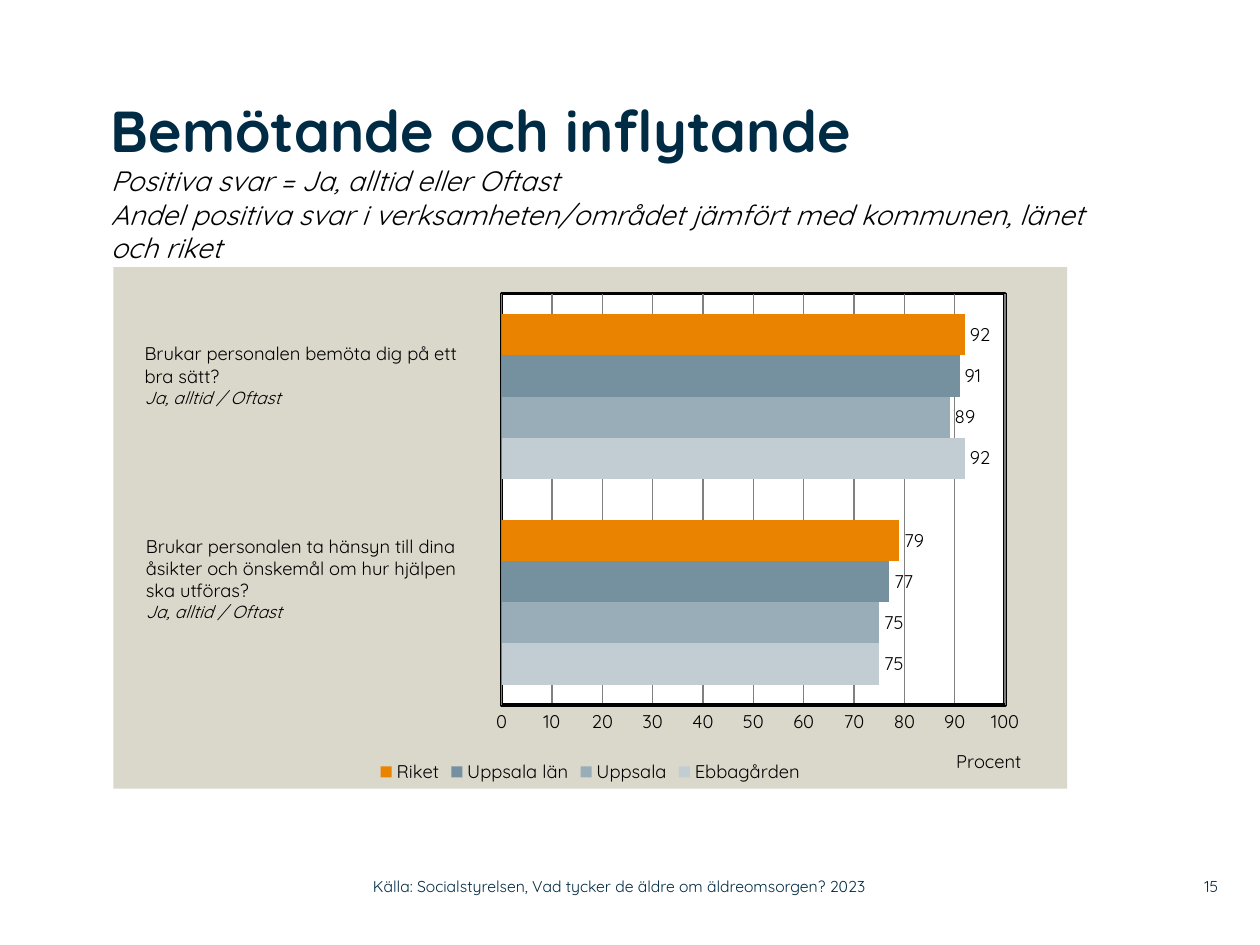
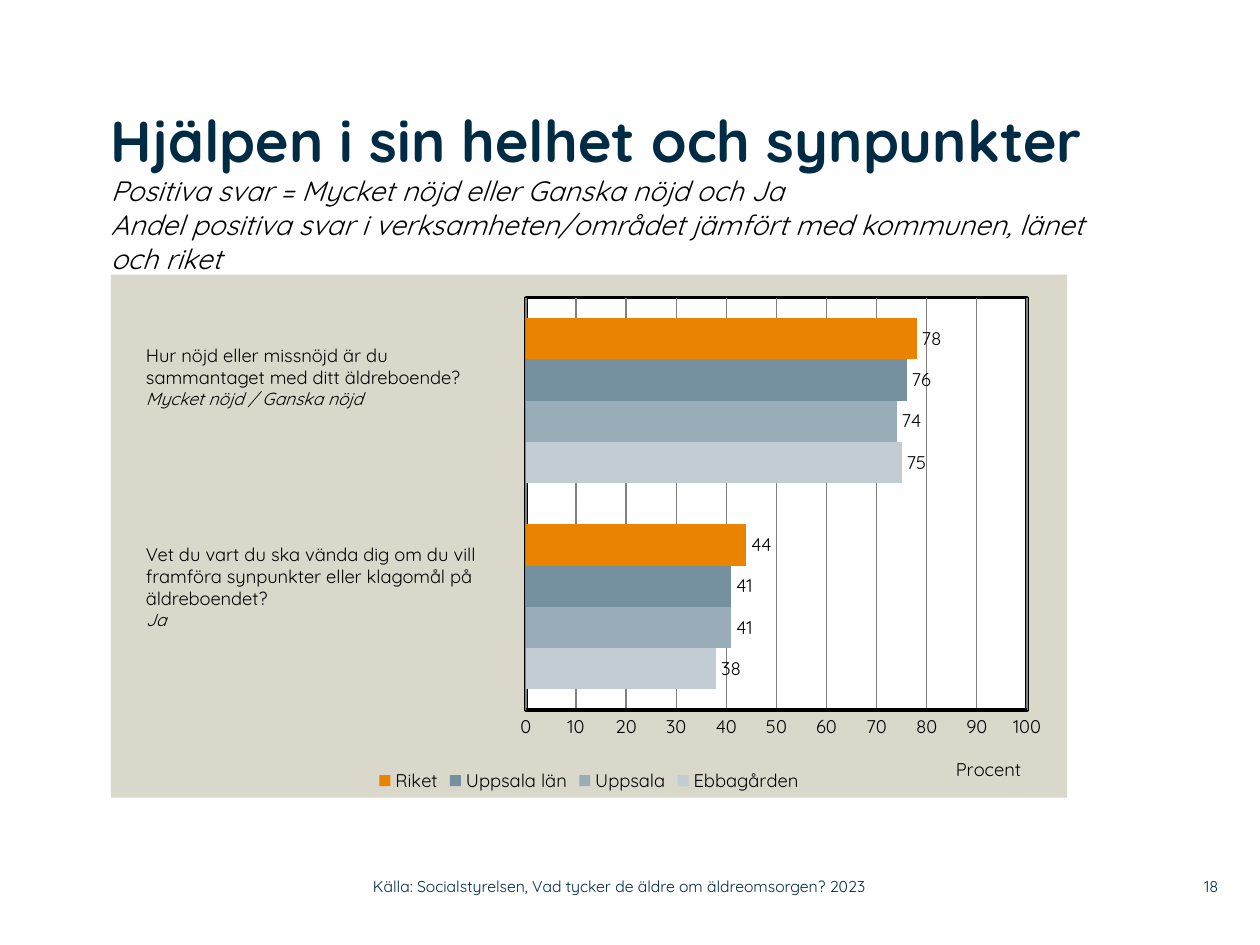
from dataclasses import dataclass

from lxml import etree
from pptx import Presentation
from pptx.chart.data import CategoryChartData
from pptx.dml.color import RGBColor
from pptx.enum.chart import (XL_CHART_TYPE, XL_LABEL_POSITION,
                             XL_LEGEND_POSITION, XL_TICK_MARK)
from pptx.enum.text import MSO_ANCHOR, MSO_AUTO_SIZE, PP_ALIGN
from pptx.oxml import parse_xml
from pptx.oxml.ns import nsdecls, qn
from pptx.util import Inches, Pt

BAR_CLUSTERED = XL_CHART_TYPE.BAR_CLUSTERED
OUTSIDE_END = XL_LABEL_POSITION.OUTSIDE_END
LEGEND_BOTTOM = XL_LEGEND_POSITION.BOTTOM
NO_TICK = XL_TICK_MARK.NONE
TOP, MIDDLE = MSO_ANCHOR.TOP, MSO_ANCHOR.MIDDLE
LEFT, RIGHT = PP_ALIGN.LEFT, PP_ALIGN.RIGHT
FIXED, GROW = MSO_AUTO_SIZE.NONE, MSO_AUTO_SIZE.SHAPE_TO_FIT_TEXT

FONT = "Quicksand"
TITLE_ONLY = 5
COLORS = {
    "navy": "002B45", "black": "000000", "white": "FFFFFF",
    "panel": "DAD7CB", "grid": "808080",
    "Ebbagården": "C2CDD3", "Uppsala": "99ADB9",
    "Uppsala län": "75909F", "Riket": "E98300",
}
FORMATS = {
    "title": {"size": 33, "bold": True, "color": "navy"},
    "subtitle": {"size": 16, "bold": False, "italic": True, "color": "black"},
    "question": {"size": 10.5, "color": "black"},
    "answer": {"size": 10, "italic": True, "color": "black"},
    "footer": {"size": 9, "color": "navy"},
    "chart": {"size": 10.5, "bold": False, "color": "black"},
}
SUBTITLE = ("Andel positiva svar i verksamheten/området jämfört med "
            "kommunen, länet och riket")
SOURCE = "Källa: Socialstyrelsen, Vad tycker de äldre om äldreomsorgen? 2023"


@dataclass
class Area:
    left: float
    top: float
    width: float
    height: float

    def lengths(self) -> list:
        return [Inches(value) for value in
                (self.left, self.top, self.width, self.height)]


@dataclass
class Question:
    area: Area
    lines: list[str]
    answer: str


@dataclass
class SurveyChart:
    area: Area
    plot: Area  # fractions of the chart
    values: dict[str, tuple[int, int]]  # bottom group first


@dataclass
class SurveyPage:
    number: int
    title: str
    positive: str
    title_area: Area
    chart: SurveyChart
    questions: list[Question]


PAGES = [
    SurveyPage(
        15, "Bemötande och inflytande",
        "Positiva svar = Ja, alltid eller Oftast",
        Area(0.88, 0.75, 8.04, 1.2),
        SurveyChart(
            Area(0.9, 2.12, 7.57, 4.14), Area(0.407, 0.051, 0.528, 0.789),
            {"Ebbagården": (75, 92), "Uppsala": (75, 89),
             "Uppsala län": (77, 91), "Riket": (79, 92)}),
        [Question(Area(1.05, 2.67, 2.97, 0.81),
                  ["Brukar personalen bemöta dig på ett", "bra sätt?"],
                  "Ja, alltid / Oftast"),
         Question(Area(1.06, 4.2, 3.01, 0.98),
                  ["Brukar personalen ta hänsyn till dina",
                   "åsikter och önskemål om hur hjälpen", "ska utföras?"],
                  "Ja, alltid / Oftast")]),
    SurveyPage(
        18, "Hjälpen i sin helhet och synpunkter",
        "Positiva svar = Mycket nöjd eller Ganska nöjd och Ja",
        Area(0.88, 0.83, 7.79, 1.34),
        SurveyChart(
            Area(0.88, 2.18, 7.59, 4.15), Area(0.434, 0.044, 0.524, 0.789),
            {"Ebbagården": (38, 75), "Uppsala": (41, 74),
             "Uppsala län": (41, 76), "Riket": (44, 78)}),
        [Question(Area(1.06, 2.68, 3.1, 0.81),
                  ["Hur nöjd eller missnöjd är du",
                   "sammantaget med ditt äldreboende?"],
                  "Mycket nöjd / Ganska nöjd"),
         Question(Area(1.06, 4.26, 3.05, 0.81),
                  ["Vet du vart du ska vända dig om du vill framföra "
                   "synpunkter eller klagomål på äldreboendet?"], "Ja")]),
]


def rgb(name: str) -> RGBColor:
    return RGBColor.from_string(COLORS[name])


def format_font(font, style: str) -> None:
    font.name = FONT
    for key, value in FORMATS[style].items():
        if key == "color":
            font.color.rgb = rgb(value)
        else:
            setattr(font, key, Pt(value) if key == "size" else value)


def add_span(para, text: str, style: str) -> None:
    span = para.add_run()
    span.text = text
    format_font(span.font, style)


def set_frame(frame, anchor, auto_size, inset: bool = True) -> None:
    frame.word_wrap = True
    frame.auto_size = auto_size
    frame.vertical_anchor = anchor
    if not inset:
        for side in ("left", "right", "top", "bottom"):
            setattr(frame, f"margin_{side}", 0)


# Title and footer
def write_title(page, survey: SurveyPage) -> None:
    box = page.shapes.title
    box.left, box.top, box.width, box.height = survey.title_area.lengths()
    set_frame(box.text_frame, TOP, FIXED, inset=False)
    para = box.text_frame.paragraphs[0]
    para.alignment = LEFT
    add_span(para, survey.title, "title")
    for line in (survey.positive, SUBTITLE):
        para.add_line_break()
        add_span(para, line, "subtitle")


def add_footer(page, area: Area, text: str, alignment) -> None:
    box = page.shapes.add_textbox(*area.lengths())
    set_frame(box.text_frame, MIDDLE, FIXED, inset=False)
    para = box.text_frame.paragraphs[0]
    para.alignment = alignment
    add_span(para, text, "footer")


# Question labels
def add_question(page, question: Question) -> None:
    frame = page.shapes.add_textbox(*question.area.lengths()).text_frame
    set_frame(frame, TOP, GROW)
    para = frame.paragraphs[0]
    for line in question.lines:
        add_span(para, line, "question")
        para = frame.add_paragraph()
    add_span(para, question.answer, "answer")


# Chart
def fill_xml(fill: str, line: str) -> etree._Element:
    return parse_xml(
        f'<c:spPr {nsdecls("c", "a")}><a:solidFill><a:srgbClr '
        f'val="{COLORS[fill]}"/></a:solidFill>{line}</c:spPr>')


def layout_xml(values: dict[str, float], inner: bool = False):
    layout = etree.Element(qn("c:layout"))
    manual = etree.SubElement(layout, qn("c:manualLayout"))
    settings = {"layoutTarget": "inner"} if inner else {}
    settings.update(xMode="edge", yMode="edge", **values)
    for key, value in settings.items():
        etree.SubElement(manual, qn(f"c:{key}")).set("val", str(value))
    return layout


def replace_layout(parent, index: int, layout) -> None:
    for old in parent.findall(qn("c:layout")):
        parent.remove(old)
    parent.insert(index, layout)


def format_value_axis(axis) -> None:
    axis.minimum_scale, axis.maximum_scale, axis.major_unit = 0, 100, 10
    axis.major_tick_mark = axis.minor_tick_mark = NO_TICK
    axis.has_major_gridlines = True
    for line, color, width in (
            (axis.format.line, "black", 2),
            (axis.major_gridlines.format.line, "grid", 0.75)):
        line.color.rgb = rgb(color)
        line.width = Pt(width)
    format_font(axis.tick_labels.font, "chart")
    title = axis.axis_title
    add_span(title.text_frame.paragraphs[0], "Procent", "chart")
    replace_layout(title._element, 1, layout_xml({"x": 0.88, "y": 0.915}))


def add_survey_chart(page, survey: SurveyChart) -> None:
    data = CategoryChartData()
    data.categories = ["1", "2"]
    for name, values in survey.values.items():
        data.add_series(name, values)
    chart = page.shapes.add_chart(
        BAR_CLUSTERED, *survey.area.lengths(), data).chart
    chart.has_title = False
    format_font(chart.font, "chart")
    chart.has_legend = True
    chart.legend.position = LEGEND_BOTTOM
    chart.legend.include_in_layout = False
    format_font(chart.legend.font, "chart")
    chart.category_axis.visible = False
    format_value_axis(chart.value_axis)

    plot = chart.plots[0]
    plot.gap_width, plot.overlap = 100, 0
    plot.vary_by_categories = False
    for series in plot.series:
        series.format.fill.solid()
        series.format.fill.fore_color.rgb = rgb(series.name)
        labels = series.data_labels
        labels.show_value = True
        labels.position = OUTSIDE_END
        format_font(labels.font, "chart")

    # Panel behind the chart and framed plot area
    space = chart._chartSpace
    space.chart.addnext(fill_xml("panel", "<a:ln><a:noFill/></a:ln>"))
    plot_area = space.chart.plotArea
    area = survey.plot
    replace_layout(plot_area, 0, layout_xml(
        {"x": area.left, "y": area.top, "w": area.width, "h": area.height},
        inner=True))
    plot_area.append(fill_xml(
        "white", f'<a:ln w="{Pt(2)}"><a:solidFill><a:srgbClr '
        f'val="{COLORS["black"]}"/></a:solidFill></a:ln>'))


def build_page(deck, survey: SurveyPage) -> None:
    page = deck.slides.add_slide(deck.slide_layouts[TITLE_ONLY])
    add_survey_chart(page, survey.chart)
    write_title(page, survey)
    for question in survey.questions:
        add_question(page, question)
    add_footer(page, Area(9.2, 6.89, 0.47, 0.29), str(survey.number), RIGHT)
    add_footer(page, Area(2.96, 6.89, 4.43, 0.29), SOURCE, LEFT)


def main() -> None:
    deck = Presentation()
    deck.slide_width, deck.slide_height = Inches(10), Inches(7.5)
    for survey in PAGES:
        build_page(deck, survey)
    deck.save("out.pptx")


if __name__ == "__main__":
    main()
